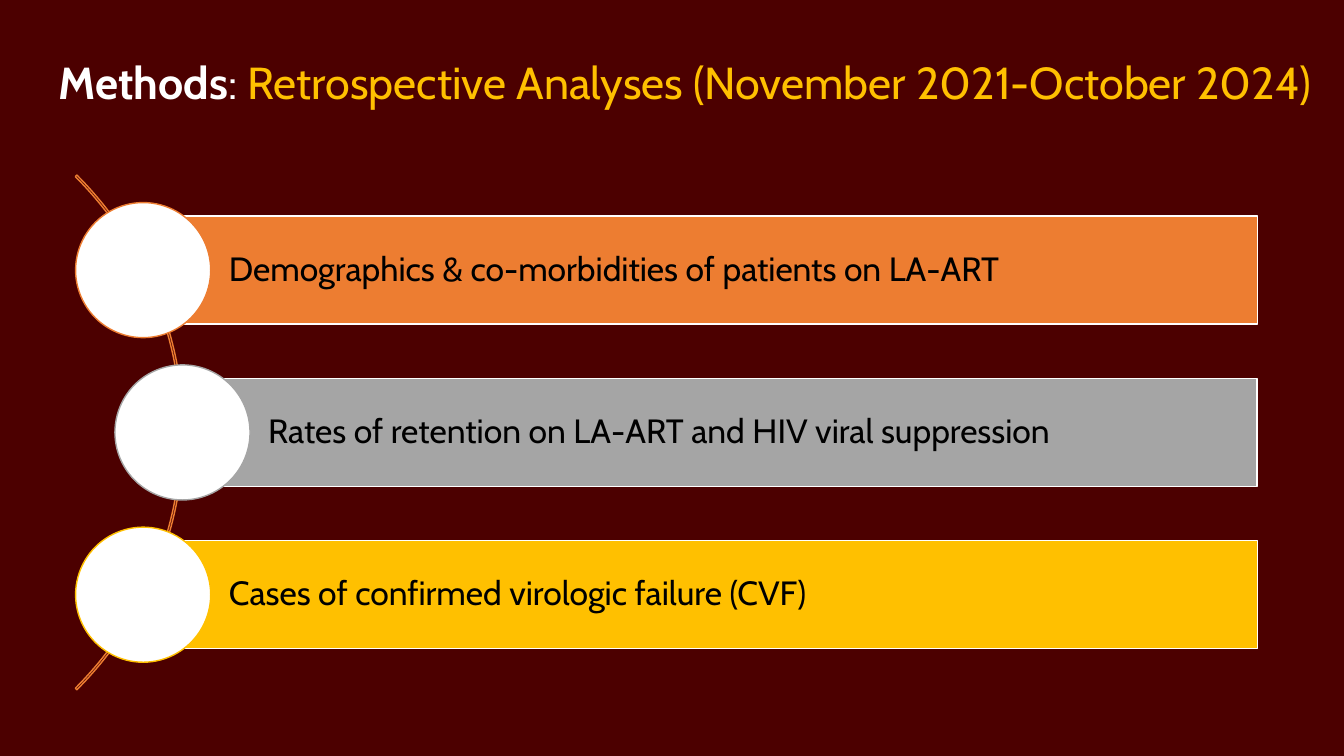
from dataclasses import dataclass

from pptx import Presentation
from pptx.dml.color import RGBColor as Rgb
from pptx.enum.shapes import MSO_SHAPE as Kind
from pptx.enum.text import MSO_ANCHOR as Anchor, MSO_AUTO_SIZE as Fit, PP_ALIGN as Align
from pptx.util import Inches, Pt


@dataclass(frozen=True)
class Theme:
    font: str = "Cabin"
    back: str = "4C0000"
    white: str = "FFFFFF"
    black: str = "000000"
    orange: str = "ED7D31"
    gray: str = "A5A5A5"
    gold: str = "FFC000"
    head: int = 32
    body: int = 24
    rule: int = 1


def apply(item, form):
    for name, value in form.items():
        setattr(item, name, value)


class Deck:
    def __init__(self, theme):
        self.theme = theme
        self.file = Presentation()
        apply(self.file, {"slide_width": Inches(13.33), "slide_height": Inches(7.5)})
        self.slide = self.file.slides.add_slide(self.file.slide_layouts[5])
        fill = self.slide.background.fill
        fill.solid()
        fill.fore_color.rgb = Rgb.from_string(theme.back)

    def text(self, frame, runs, size, form):
        """Fill a text frame with one paragraph of (text, color, bold) runs."""
        apply(frame, {"word_wrap": True, "auto_size": Fit.NONE, **form})
        para = frame.paragraphs[0]
        apply(para, {"alignment": Align.LEFT, "line_spacing": 0.9})
        for words, color, bold in runs:
            run = para.add_run()
            run.text = words
            apply(run.font, {"name": self.theme.font, "size": Pt(size), "bold": bold})
            run.font.color.rgb = Rgb.from_string(color)

    def title(self, box, runs):
        shape = self.slide.shapes.title
        apply(shape, dict(zip(("left", "top", "width", "height"), map(Inches, box))))
        self.text(shape.text_frame, runs, self.theme.head,
                  {"vertical_anchor": Anchor.BOTTOM})

    def shape(self, kind, box, fill, line):
        shape = self.slide.shapes.add_shape(kind, *map(Inches, box))
        shape.shadow.inherit = False
        if fill:
            shape.fill.solid()
            shape.fill.fore_color.rgb = Rgb.from_string(fill)
        else:
            shape.fill.background()
        shape.line.color.rgb = Rgb.from_string(line)
        shape.line.width = Pt(self.theme.rule)
        return shape

    def arc(self, x, y, size, color):
        shape = self.shape(Kind.BLOCK_ARC, (x - size / 2, y - size / 2, size, size),
                           None, color)
        for spot, value in enumerate((189, 27, 0.003)):
            shape.adjustments[spot] = value

    def bar(self, box, color, words):
        shape = self.shape(Kind.RECTANGLE, box, color, self.theme.white)
        pad = Inches(0.07)
        self.text(shape.text_frame, [(words, self.theme.black, False)], self.theme.body,
                  {"vertical_anchor": Anchor.MIDDLE, "margin_left": Inches(0.85),
                   "margin_right": pad, "margin_top": pad, "margin_bottom": pad})

    def disc(self, x, y, size, color):
        self.shape(Kind.OVAL, (x - size / 2, y - size / 2, size, size),
                   self.theme.white, color)


def main():
    theme = Theme()
    deck = Deck(theme)

    # Heading
    deck.title((0.48, 0.33, 12.74, 0.8), [
        ("Methods", theme.white, True),
        (": ", theme.white, False),
        ("Retrospective Analyses (November 2021-October 2024)", theme.gold, False),
    ])

    # Curve behind the three topics
    mid, step = 4.29, 1.61
    deck.arc(-1.79, mid, 7.22, theme.orange)

    # Topic bars, each starting at the center of its disc
    right, tall, disc = 12.47, 1.07, 1.34
    topics = [
        (1.42, theme.orange, "Demographics & co-morbidities of patients on LA-ART"),
        (1.81, theme.gray, "Rates of retention on LA-ART and HIV viral suppression"),
        (1.42, theme.gold, "Cases of confirmed virologic failure (CVF)"),
    ]
    for row, (x, color, words) in enumerate(topics):
        y = mid + (row - 1) * step
        deck.bar((x, y - tall / 2, right - x, tall), color, words)
        deck.disc(x, y, disc, color)

    deck.file.save("out.pptx")


if __name__ == "__main__":
    main()
